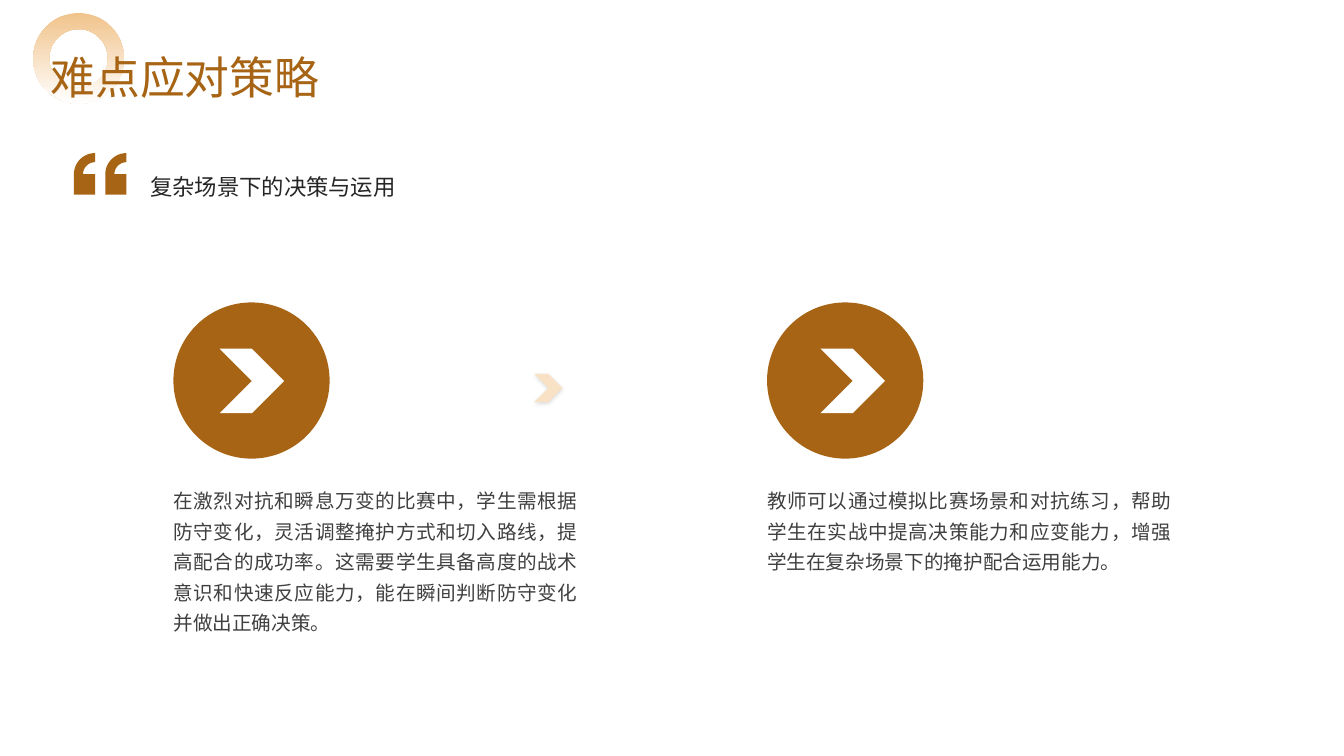
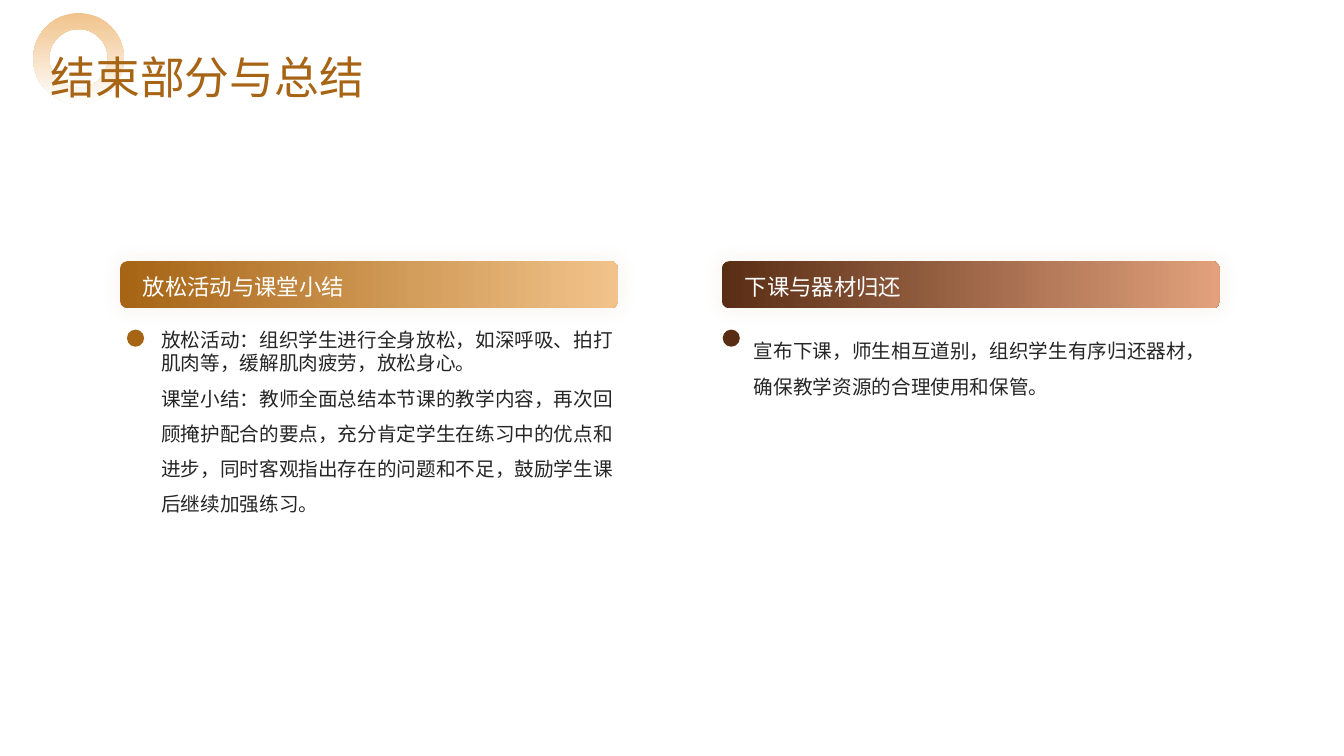
import math
from dataclasses import dataclass

import lxml.etree
import pptx
import pptx.dml.color
import pptx.enum.shapes
import pptx.enum.text
import pptx.oxml
import pptx.oxml.ns
import pptx.util

Pt = pptx.util.Pt
qn = pptx.oxml.ns.qn
SHAPE = pptx.enum.shapes.MSO_SHAPE
ALIGN = pptx.enum.text.PP_ALIGN
ANCHOR = pptx.enum.text.MSO_ANCHOR


@dataclass(frozen=True)
class Theme:
    font: str = "Noto Sans CJK SC"
    brown: str = "A66414"
    sand: str = "F1C38B"
    cream: str = "F8E1C5"
    dark: str = "592D14"
    rose: str = "E2A17C"
    white: str = "FFFFFF"
    ink: str = "262626"
    grey: str = "404040"
    title: int = 32
    heading: int = 16
    body: int = 14


T = Theme()

STRATEGY = {
    "title": "难点应对策略",
    "heading": "复杂场景下的决策与运用",
    "columns": [
        (123.84, 156.96, "在激烈对抗和瞬息万变的比赛中，学生需根据防守变化，灵活调整掩护方式和切入路线，提高配合的成功率。这需要学生具备高度的战术意识和快速反应能力，能在瞬间判断防守变化并做出正确决策。"),
        (547.92, 586.08, "教师可以通过模拟比赛场景和对抗练习，帮助学生在实战中提高决策能力和应变能力，增强学生在复杂场景下的掩护配合运用能力。"),
    ],
}

CLOSING = {
    "title": "结束部分与总结",
    "columns": [
        {
            "heading": "放松活动与课堂小结",
            "colors": (T.brown, T.sand),
            "bar": 85.68, "dot": 90.72, "text": 108,
            "body": [
                "放松活动：组织学生进行全身放松，如深呼吸、拍打肌肉等，缓解肌肉疲劳，放松身心。",
                "课堂小结：教师全面总结本节课的教学内容，再次回顾掩护配合的要点，充分肯定学生在练习中的优点和进步，同时客观指出存在的问题和不足，鼓励学生课后继续加强练习。",
            ],
            "spacing": [1.0, 1.5],
        },
        {
            "heading": "下课与器材归还",
            "colors": (T.dark, T.rose),
            "bar": 515.52, "dot": 516.24, "text": 531.36,
            "body": ["宣布下课，师生相互道别，组织学生有序归还器材，确保教学资源的合理使用和保管。"],
            "spacing": [1.5],
        },
    ],
}


def rgb(color):
    return pptx.dml.color.RGBColor.from_string(color)


def write(sp, box, paragraphs, size=T.body, color=T.ink, spacing=(1.5,),
          align=ALIGN.LEFT, anchor=ANCHOR.TOP, insets=(7.2, 3.6)):
    sp.left, sp.top, sp.width, sp.height = (Pt(v) for v in box)
    tf = sp.text_frame
    tf.word_wrap = True
    tf.auto_size = pptx.enum.text.MSO_AUTO_SIZE.NONE
    tf.vertical_anchor = anchor
    tf.margin_left = tf.margin_right = Pt(insets[0])
    tf.margin_top = tf.margin_bottom = Pt(insets[1])
    for i, (text, line) in enumerate(zip(paragraphs, spacing)):
        p = tf.add_paragraph() if i else tf.paragraphs[0]
        p.alignment = align
        p.line_spacing = line
        p.space_before = p.space_after = Pt(0)
        if sp.is_placeholder:
            pPr = p._p.get_or_add_pPr()
            pPr.set("marL", "0")
            pPr.set("indent", "0")
            lxml.etree.SubElement(pPr, qn("a:buNone"))
        r = p.add_run()
        r.text = text
        r.font.size = Pt(size)
        r.font.color.rgb = rgb(color)
        r.font.name = T.font
        ea = lxml.etree.SubElement(r._r.get_or_add_rPr(), qn("a:ea"))
        ea.set("typeface", T.font)


def textbox(s, box, text, **style):
    write(s.shapes.add_textbox(*(Pt(v) for v in box)), box, [text], **style)


def paint(sp, colors, angle=0):
    sp.shadow.inherit = False
    sp.line.fill.background()
    if isinstance(colors, str):
        sp.fill.solid()
        sp.fill.fore_color.rgb = rgb(colors)
        return
    sp.fill.gradient()
    sp.fill.gradient_angle = angle
    for stop, position, color in zip(sp.fill.gradient_stops, (0, 1), colors):
        stop.position = position
        stop.color.rgb = rgb(color)


def shape(s, kind, box, colors, angle=0):
    sp = s.shapes.add_shape(kind, *(Pt(v) for v in box))
    paint(sp, colors, angle)
    return sp


def add_shadow(sp, color, alpha, blur, dist, degrees):
    effects = sp.element.spPr.find(qn("a:effectLst"))
    shadow = lxml.etree.SubElement(effects, qn("a:outerShdw"))
    for name, value in (("blurRad", Pt(blur)), ("dist", Pt(dist)), ("dir", degrees * 60000)):
        shadow.set(name, str(int(value)))
    shadow.set("rotWithShape", "0")
    clr = lxml.etree.SubElement(shadow, qn("a:srgbClr"), val=color)
    lxml.etree.SubElement(clr, qn("a:alpha"), val=str(alpha * 1000))


def quote_marks(s, left, top, radius=15.1, inner=8.6, height=29.6, step=22.4):
    def arc(cx, cy, size, start, end, parts=16):
        angles = [math.radians(start + (end - start) * i / parts) for i in range(parts + 1)]
        return [(cx + size * math.cos(a), cy - size * math.sin(a)) for a in angles]

    builder = None
    for x in (left, left + step):
        right, middle, bottom = x + radius, top + radius, top + height
        points = arc(right, middle, inner, 90, 180)
        points += [(right, middle), (right, bottom), (x, bottom)]
        points += arc(right, middle, radius, 180, 90)
        points = [(Pt(px), Pt(py)) for px, py in points]
        if builder is None:
            builder = s.shapes.build_freeform(*points[0])
        else:
            builder.move_to(*points[0])
        builder.add_line_segments(points[1:], close=True)
    paint(builder.convert_to_shape(), T.brown)


def new_slide(prs, title):
    s = prs.slides.add_slide(prs.slide_layouts[3])
    ring = shape(s, SHAPE.DONUT, (23.76, 9.36, 64.8, 64.8), (T.sand, T.white), angle=270)
    ring.adjustments[0] = 0.176
    sp = s.shapes.title
    write(sp, (36, 33.84, 815, 33.84), [title], size=T.title, color=T.brown,
          spacing=[1.2], anchor=ANCHOR.MIDDLE, insets=(0, 0))
    ring.element.addnext(sp.element)
    return s


def strategy_slide(prs):
    s = new_slide(prs, STRATEGY["title"])
    quote_marks(s, 52.8, 109.4)
    textbox(s, (107.28, 113.76, 775.44, 97.2), STRATEGY["heading"],
            size=T.heading, insets=(0, 0))
    for i, (x, arrow_x, text) in enumerate(STRATEGY["columns"], 1):
        shape(s, SHAPE.OVAL, (x, 216, 111.6, 111.6), T.brown)
        shape(s, SHAPE.CHEVRON, (arrow_x, 249.12, 46.08, 46.08), T.white)
        write(s.placeholders[i], (x, 341.28, 288.72, 126.72), [text], color=T.grey,
              spacing=[1.3], align=ALIGN.JUSTIFY, insets=(0, 2.88))
    arrow = shape(s, SHAPE.CHEVRON, (381.6, 267.12, 20.16, 20.16), T.cream)
    add_shadow(arrow, "000000", 15, 3, 1, 90)


def closing_slide(prs):
    s = new_slide(prs, CLOSING["title"])
    for i, col in enumerate(CLOSING["columns"], 1):
        bar = shape(s, SHAPE.ROUNDED_RECTANGLE, (col["bar"], 186.48, 355.68, 33.84), col["colors"])
        add_shadow(bar, T.brown, 8, 15, 0, 0)
        textbox(s, (col["bar"] + 9.36, 184.32, 339.12, 38.88), col["heading"],
                size=T.heading, color=T.white, spacing=[1.1], anchor=ANCHOR.MIDDLE)
        shape(s, SHAPE.FLOWCHART_CONNECTOR, (col["dot"], 235.44, 12.24, 12.24), col["colors"][0])
        write(s.placeholders[i], (col["text"], 230.4, 344.88, 135.36), col["body"],
              spacing=col["spacing"])


def main():
    prs = pptx.Presentation()
    prs.slide_width, prs.slide_height = Pt(960), Pt(540)
    strategy_slide(prs)
    closing_slide(prs)
    prs.save("out.pptx")


if __name__ == "__main__":
    main()
